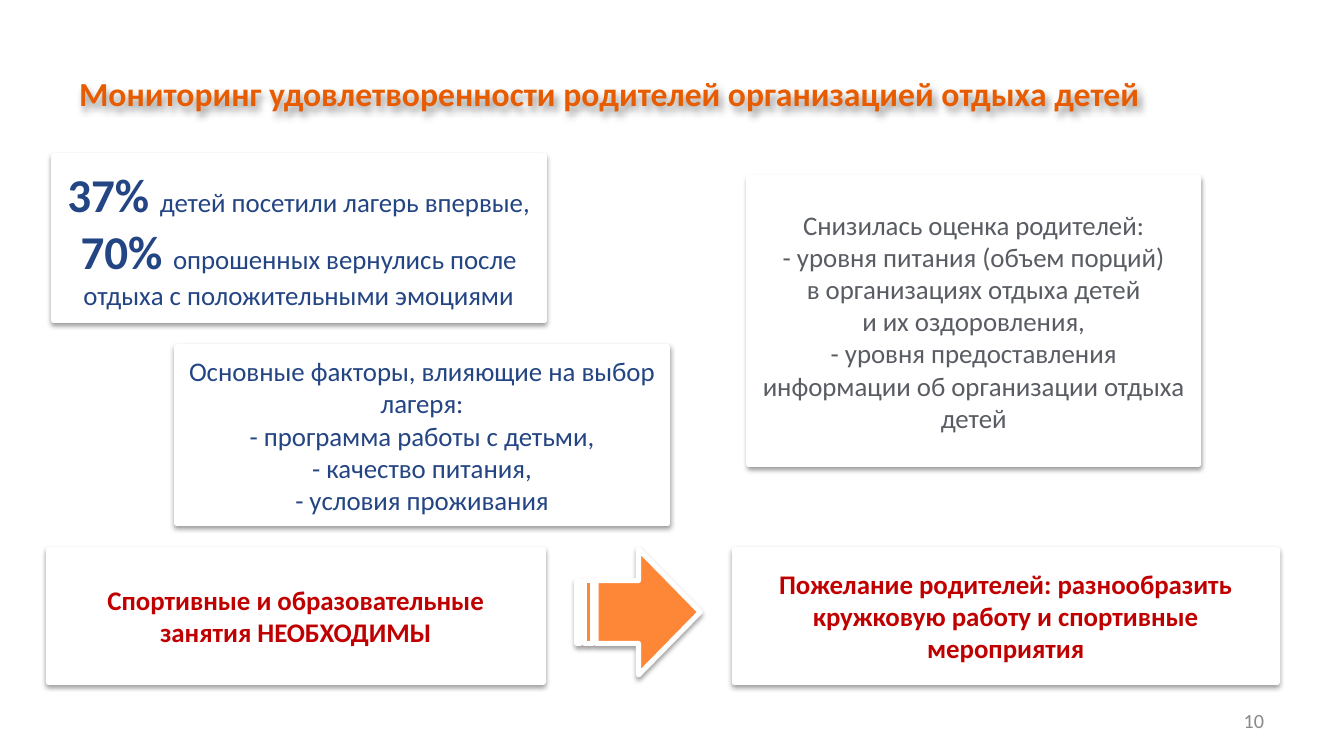
from dataclasses import dataclass

from lxml.etree import SubElement
from pptx import Presentation
from pptx.dml.color import RGBColor
from pptx.enum.shapes import MSO_SHAPE
from pptx.enum.text import MSO_ANCHOR, PP_ALIGN
from pptx.oxml.ns import qn
from pptx.shapes.autoshape import Shape
from pptx.slide import Slide
from pptx.util import Pt

FONT = "Calibri"
WHITE = RGBColor(0xFF, 0xFF, 0xFF)
TITLE_ORANGE = RGBColor(0xE7, 0x5C, 0x01)
ARROW_ORANGE = RGBColor(0xFE, 0x86, 0x37)
BLUE = RGBColor(0x24, 0x45, 0x83)
RED = RGBColor(0xC0, 0x00, 0x00)
GRAY = RGBColor(0x59, 0x5D, 0x63)
NUMBER_GRAY = RGBColor(0x89, 0x89, 0x89)
BOTTOM_ROW = 326.9


@dataclass(frozen=True)
class Box:
    left: float
    top: float
    width: float
    height: float


@dataclass(frozen=True)
class Run:
    text: str
    size: float = 16
    bold: bool = False


@dataclass(frozen=True)
class Card:
    box: Box
    color: RGBColor
    paragraphs: list[list[Run]]


CARDS = [
    Card(Box(31.7, 92.9, 292.3, 97.9), BLUE, [[
        Run("37% ", 28, True),
        Run("детей посетили лагерь впервые, "),
        Run("70% ", 28, True),
        Run("опрошенных вернулись после отдыха с положительными эмоциями"),
    ]]),
    Card(Box(105.1, 206.6, 292.3, 105.1), BLUE, [
        [Run("Основные факторы, влияющие на выбор лагеря:")],
        [Run("- программа работы с детьми,")],
        [Run("- качество питания,")],
        [Run("- условия проживания")],
    ]),
    Card(Box(28.8, BOTTOM_ROW, 294.5, 79.2), RED, [
        [Run("Спортивные и образовательные занятия НЕОБХОДИМЫ", bold=True)],
    ]),
    Card(Box(437, BOTTOM_ROW, 323.3, 79.2), RED, [
        [Run("Пожелание родителей: разнообразить кружковую работу "
             "и спортивные мероприятия", bold=True)],
    ]),
    Card(Box(445.7, 105.8, 267.8, 170.6), GRAY, [
        [Run("Снизилась оценка родителей:")],
        [Run("- уровня питания (объем порций)")],
        [Run("в организациях отдыха детей")],
        [Run("и их оздоровления,")],
        [Run("- уровня предоставления информации об организации отдыха детей")],
    ]),
]


def add_shadow(sp: Shape, blur: float = 3.1, dist: float = 1.6,
               direction: int = 90, alpha: int = 38) -> None:
    sp.shadow.inherit = False
    effects = sp._element.spPr.find(qn("a:effectLst"))
    shadow = SubElement(effects, qn("a:outerShdw"), blurRad=str(Pt(blur)),
                        dist=str(Pt(dist)), dir=str(direction * 60000),
                        algn="ctr", rotWithShape="0")
    black = SubElement(shadow, qn("a:srgbClr"), val="000000")
    SubElement(black, qn("a:alpha"), val=str(alpha * 1000))


def write(sp: Shape, paragraphs: list[list[Run]], *, color: RGBColor,
          align: PP_ALIGN = PP_ALIGN.CENTER) -> None:
    tf = sp.text_frame
    tf.word_wrap = True
    tf.vertical_anchor = MSO_ANCHOR.MIDDLE
    for i, runs in enumerate(paragraphs):
        p = tf.add_paragraph() if i else tf.paragraphs[0]
        p.alignment = align
        for run in runs:
            r = p.add_run()
            r.text = run.text
            r.font.name = FONT
            r.font.size = Pt(run.size)
            r.font.bold = run.bold
            r.font.color.rgb = color


def lengths(box: Box) -> tuple[Pt, Pt, Pt, Pt]:
    return Pt(box.left), Pt(box.top), Pt(box.width), Pt(box.height)


def add_label(s: Slide, box: Box, run: Run, *, color: RGBColor,
              align: PP_ALIGN) -> Shape:
    sp = s.shapes.add_textbox(*lengths(box))
    write(sp, [[run]], color=color, align=align)
    return sp


def add_panel(s: Slide, kind: MSO_SHAPE, box: Box, fill: RGBColor) -> Shape:
    sp = s.shapes.add_shape(kind, *lengths(box))
    sp.fill.solid()
    sp.fill.fore_color.rgb = fill
    sp.line.color.rgb = WHITE
    sp.line.width = Pt(3)
    add_shadow(sp)
    return sp


def main() -> None:
    prs = Presentation()
    prs.slide_width, prs.slide_height = Pt(800), Pt(450)
    s = prs.slides.add_slide(prs.slide_layouts[6])

    title = add_label(
        s, Box(40, 18, 720, 75),
        Run("Мониторинг удовлетворенности родителей организацией отдыха детей",
            20, True),
        color=TITLE_ORANGE, align=PP_ALIGN.LEFT)
    add_shadow(title, blur=4, dist=3, direction=60, alpha=40)
    add_label(s, Box(573, 417, 186.5, 24), Run("10", 12),
              color=NUMBER_GRAY, align=PP_ALIGN.RIGHT)

    for card in CARDS:
        sp = add_panel(s, MSO_SHAPE.RECTANGLE, card.box, WHITE)
        write(sp, card.paragraphs, color=card.color)
    add_panel(s, MSO_SHAPE.STRIPED_RIGHT_ARROW,
              Box(343.4, BOTTOM_ROW, 73.4, 74.9), ARROW_ORANGE)

    prs.save("out.pptx")


if __name__ == "__main__":
    main()
